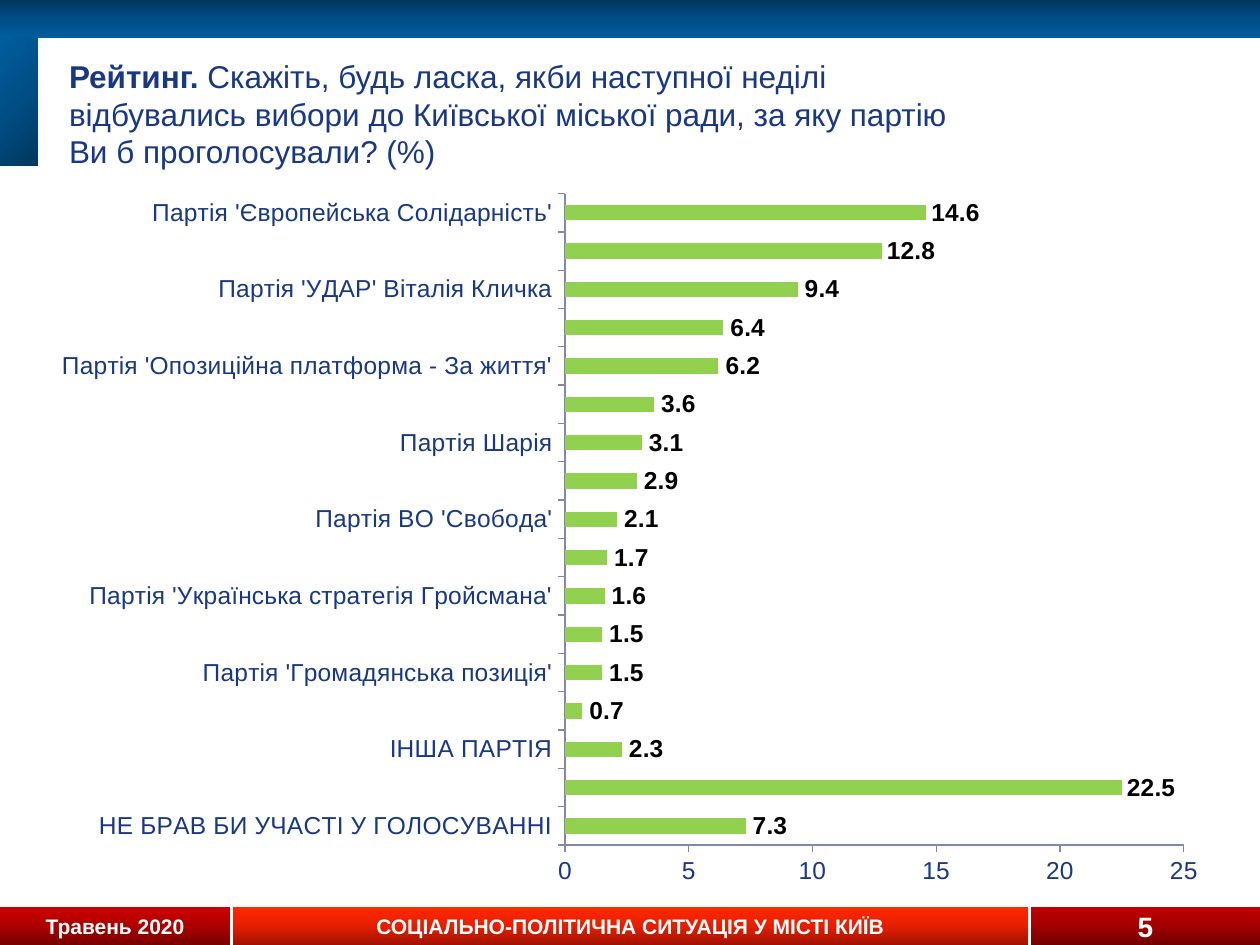
from dataclasses import dataclass

from lxml import etree
from pptx import Presentation
from pptx.chart.data import CategoryChartData
from pptx.dml.color import RGBColor
from pptx.enum.chart import XL_CHART_TYPE as ChartType, XL_LABEL_POSITION as LabelPos
from pptx.enum.chart import XL_TICK_MARK as Tick
from pptx.enum.shapes import MSO_SHAPE as Shape
from pptx.enum.text import MSO_ANCHOR as Anchor, PP_ALIGN as Align
from pptx.oxml import parse_xml
from pptx.oxml.ns import nsdecls, qn

EMU_PER_PX = 914400 / 126
FONT, NAVY, GREEN, AXIS = "Arial", "183883", "92D050", "8487AB"
BLUES = ("00375E", "004E85", "005D9E")


@dataclass
class Band:
    x: int
    y: int
    w: int
    h: int
    colors: tuple
    angle: int
    text: str = ""
    size: int = 12


BANDS = [
    Band(0, 907, 230, 38, ("770000", "AD0000", "CE0000"), 270, "Травень 2020"),
    Band(233, 907, 795, 38, ("A01200", "E61F00", "FF2800"), 270,
         "СОЦІАЛЬНО-ПОЛІТИЧНА СИТУАЦІЯ У МІСТІ КИЇВ"),
    Band(0, 0, 1260, 38, BLUES, 90),
    Band(0, 37, 38, 129, BLUES, 225),
    Band(1031, 907, 229, 38, ("720000", "A20000", "C00000"), 270, "5", 16),
]

# Listed from the bottom bar to the top one; every other bar is unnamed
RATINGS = [
    ("НЕ БРАВ БИ УЧАСТІ У ГОЛОСУВАННІ", 7.3),
    ("", 22.5),
    ("ІНША ПАРТІЯ", 2.3),
    ("", 0.7),
    ("Партія 'Громадянська позицiя'", 1.5),
    ("", 1.5),
    ("Партія 'Українська стратегія Гройсмана'", 1.6),
    ("", 1.7),
    ("Партія ВО 'Свобода'", 2.1),
    ("", 2.9),
    ("Партія Шарія", 3.1),
    ("", 3.6),
    ("Партія 'Опозицiйна платформа - За життя'", 6.2),
    ("", 6.4),
    ("Партія 'УДАР' Віталія Кличка", 9.4),
    ("", 12.8),
    ("Партія 'Європейська Солiдарнiсть'", 14.6),
]


def px(*values: int) -> list:
    return [round(v * EMU_PER_PX) for v in values]


def rgb(value: str) -> RGBColor:
    return RGBColor.from_string(value)


def set_font(font, *, size: int, color: str, bold: bool = False) -> None:
    font.name, font.bold = FONT, bold
    font.size = size * 12700
    font.color.rgb = rgb(color)


def write(tf, *parts: tuple, size: int, color: str, align=Align.LEFT, left: int = 13) -> None:
    """Write (text, bold) parts as one paragraph."""
    tf.word_wrap = True
    tf.vertical_anchor = Anchor.MIDDLE
    tf.margin_left, tf.margin_right, tf.margin_top, tf.margin_bottom = px(left, 13, 6, 6)
    p = tf.paragraphs[0]
    p.alignment = align
    for text, bold in parts:
        r = p.add_run()
        r.text = text
        set_font(r.font, size=size, color=color, bold=bold)


def draw_band(s, band: Band) -> None:
    sp = s.shapes.add_shape(Shape.RECTANGLE, *px(band.x, band.y, band.w, band.h))
    sp.shadow.inherit = False
    sp.line.fill.background()
    stops = "".join(f'<a:gs pos="{i * 50000}"><a:srgbClr val="{c}"/></a:gs>'
                    for i, c in enumerate(band.colors))
    grad = parse_xml(f'<a:gradFill {nsdecls("a")} rotWithShape="1"><a:gsLst>{stops}</a:gsLst>'
                     f'<a:lin ang="{band.angle * 60000}" scaled="0"/></a:gradFill>')
    sp._element.spPr.find(qn("a:prstGeom")).addnext(grad)
    if band.text:
        write(sp.text_frame, (band.text, True), size=band.size, color="FFFFFF", align=Align.CENTER)


def layout(**values) -> etree._Element:
    """A manual chart layout from its settings."""
    items = "".join(f'<c:{k} val="{v}"/>' for k, v in values.items())
    return parse_xml(f'<c:layout {nsdecls("c")}><c:manualLayout>{items}</c:manualLayout></c:layout>')


def style_axis(axis) -> None:
    axis.has_major_gridlines = False
    axis.major_tick_mark, axis.minor_tick_mark = Tick.OUTSIDE, Tick.NONE
    axis.format.line.color.rgb = rgb(AXIS)
    set_font(axis.tick_labels.font, size=14, color=NAVY)


def label_point(point, value: float) -> None:
    """Place the value just past the end of its bar."""
    label = point.data_label
    set_font(label.font, size=14, color="000000", bold=True)
    label.position = LabelPos.INSIDE_END
    idx = label._dLbl.find(qn("c:idx"))
    idx.addnext(parse_xml(f'<c:numFmt {nsdecls("c")} formatCode="###0.0" sourceLinked="0"/>'))
    idx.addnext(layout(x=0.05 if value >= 10 else 0.04, y=0))


def draw_chart(s) -> None:
    data = CategoryChartData(number_format="###0.0")
    data.categories = [name for name, _ in RATINGS]
    data.add_series("Series 1", [value for _, value in RATINGS])
    chart = s.shapes.add_chart(ChartType.BAR_STACKED, *px(42, 183, 1170, 709), data).chart
    chart.has_legend = chart.has_title = False
    set_font(chart.font, size=18, color=NAVY)

    plot_area = chart._chartSpace.chart.plotArea
    for old in plot_area.findall(qn("c:layout")):
        plot_area.remove(old)
    plot_area.insert(0, layout(layoutTarget="inner", xMode="edge", yMode="edge",
                               x=0.447, y=0.015, w=0.529, h=0.919))

    style_axis(chart.category_axis)
    axis = chart.value_axis
    style_axis(axis)
    axis.minimum_scale, axis.maximum_scale, axis.major_unit = 0, 25, 5
    axis.tick_labels.number_format = "0"
    axis.tick_labels.number_format_is_linked = False

    plot = chart.plots[0]
    plot.gap_width, plot.overlap, plot.vary_by_categories = 150, 100, False
    series = plot.series[0]
    series.format.fill.solid()
    series.format.fill.fore_color.rgb = rgb(GREEN)
    for i, (_, value) in enumerate(RATINGS):
        label_point(series.points[i], value)


def main() -> None:
    prs = Presentation()
    prs.slide_width, prs.slide_height = px(1260, 945)
    s = prs.slides.add_slide(prs.slide_layouts[6])

    # Header and footer bands
    for band in BANDS:
        draw_band(s, band)

    # Question
    title = s.shapes.add_textbox(*px(42, 44, 953, 139))
    write(title.text_frame, ("Рейтинг. ", True),
          ("Скажіть, будь ласка, якби наступної неділі відбувались вибори до Київської "
           "міської ради, за яку партію Ви б проголосували? (%)", False),
          size=18, color=NAVY, left=27)

    # Party ratings
    draw_chart(s)
    prs.save("out.pptx")


if __name__ == "__main__":
    main()
